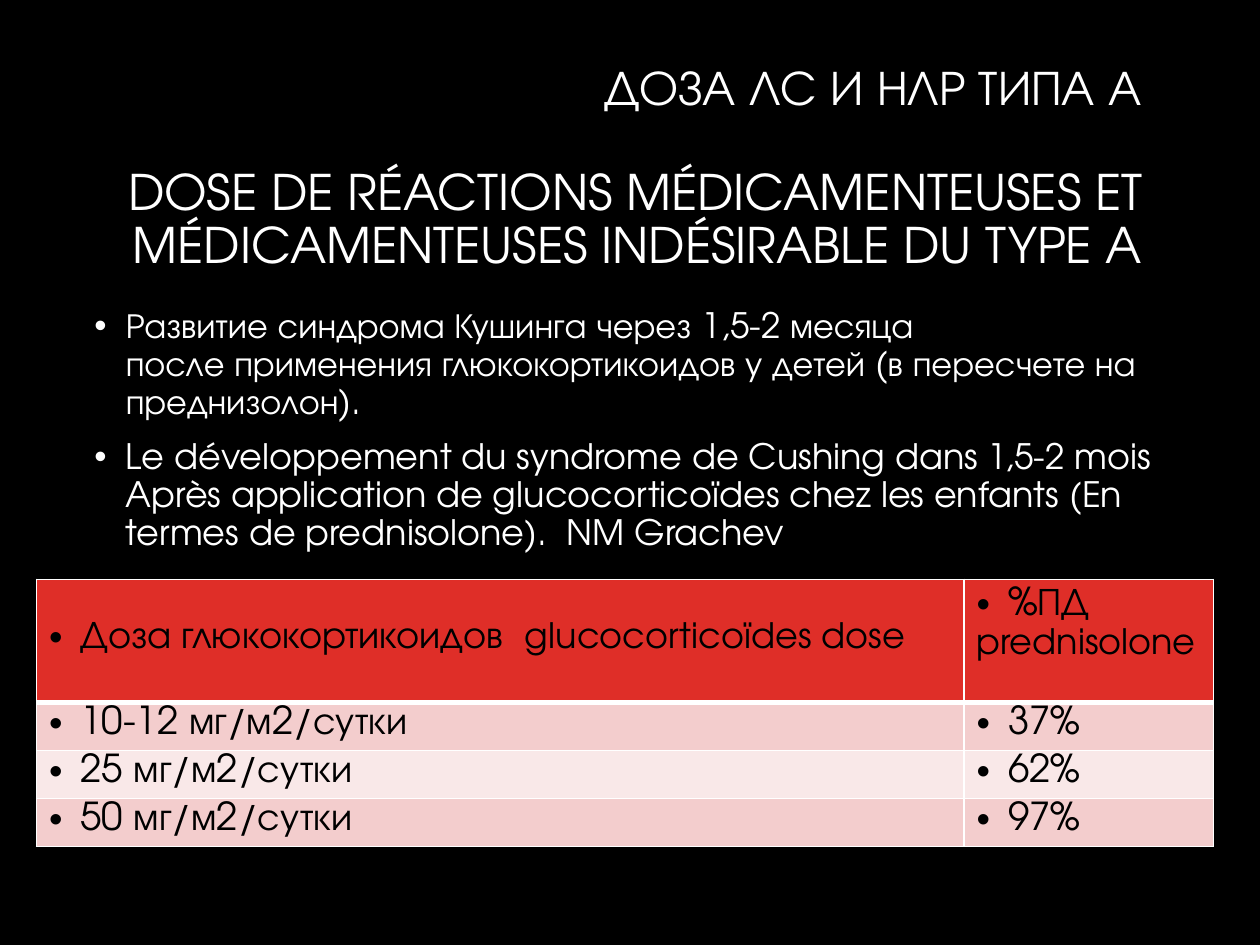
from dataclasses import dataclass

from lxml.etree import SubElement
from pptx import Presentation
from pptx.dml.color import RGBColor
from pptx.enum.text import MSO_ANCHOR as Anchor, PP_ALIGN as Align
from pptx.oxml.ns import qn
from pptx.util import Inches, Pt


@dataclass(frozen=True)
class Theme:
    """Colours, type sizes and spacing of the slide."""
    font: str = "TeX Gyre Adventor"
    background: str = "000000"
    light: str = "FFFFFF"
    dark: str = "000000"
    header: str = "DF2E28"
    bands: tuple = ("F3CDCD", "F9E8E8")
    title: int = 28
    body: int = 20
    cell: int = 22
    leading: float = 0.9
    gap: int = 10
    indent: float = 0.25
    thin: int = 1
    thick: int = 3


THEME = Theme()
WIDTH, HEIGHT = 10, 7.5
TITLE_BOX = (0.067, 0.112, 0.868, 0.188)
BODY_BOX = (0.065, 0.32, 0.87, 0.593)
TABLE_BOX = (0.029, 0.613, 0.934, 0.283)
COLUMN_SHARES = (0.788, 0.212)
ROW_SHARES = (0.46, 0.18, 0.18, 0.18)

TITLES = ("ДОЗА ЛС И НЛР ТИПА А",
          "DOSE DE RÉACTIONS MÉDICAMENTEUSES ET MÉDICAMENTEUSES INDÉSIRABLE DU TYPE A")
POINTS = (
    "Развитие синдрома Кушинга через 1,5-2 месяца\vпосле применения "
    "глюкокортикоидов у детей (в пересчете на преднизолон).",
    "Le développement du syndrome de Cushing dans 1,5-2 mois Après application de "
    "glucocorticoïdes chez les enfants (En termes de prednisolone).  NM Grachev",
)
DOSES = (("10-12 мг/м2/сутки", "37%"), ("25 мг/м2/сутки", "62%"), ("50 мг/м2/сутки", "97%"))


def apply(target, values):
    """Set each attribute of the target from a dict."""
    for name, value in values.items():
        setattr(target, name, value)


def place(box):
    """Turn shares of the slide into lengths."""
    return [Inches(share * side) for share, side in zip(box, (WIDTH, HEIGHT) * 2)]


def paint(fill, colour):
    """Give a fill one solid colour."""
    fill.solid()
    fill.fore_color.rgb = RGBColor.from_string(colour)


def write(paragraph, runs, colour, before=0, align=Align.LEFT, hanging=False, bullet=False):
    """Write (text, size) runs into a paragraph."""
    apply(paragraph, {"alignment": align, "line_spacing": THEME.leading,
                      "space_before": Pt(before)})
    properties = paragraph._p.get_or_add_pPr()
    if hanging:
        properties.set("marL", str(Inches(THEME.indent)))
        properties.set("indent", str(-Inches(THEME.indent)))
    if bullet:
        SubElement(properties, qn("a:buFont"), typeface="Arial")
        SubElement(properties, qn("a:buChar"), char="•")
    for text, size in runs:
        for index, line in enumerate(text.split("\v")):
            if index:
                paragraph.add_line_break()
            run = paragraph.add_run()
            run.text = line
            apply(run.font, {"name": THEME.font, "size": Pt(size)})
            run.font.color.rgb = RGBColor.from_string(colour)


def add_title(slide, box):
    """Place the two-language title, right aligned."""
    frame = slide.shapes.add_textbox(*place(box)).text_frame
    apply(frame, {"word_wrap": True, "vertical_anchor": Anchor.MIDDLE,
                  "margin_bottom": Inches(0.46)})
    russian, french = frame.paragraphs[0], frame.add_paragraph()
    write(russian, [(TITLES[0], THEME.title)], THEME.light, align=Align.RIGHT)
    russian._p.get_or_add_pPr().set("marR", str(Inches(0.19)))
    write(french, [(TITLES[1], THEME.title)], THEME.light, before=30, align=Align.RIGHT)


def add_points(slide, box):
    """Place the bulleted points."""
    frame = slide.shapes.add_textbox(*place(box)).text_frame
    frame.word_wrap = True
    for index, point in enumerate(POINTS):
        paragraph = frame.add_paragraph() if index else frame.paragraphs[0]
        write(paragraph, [(point, THEME.body)], THEME.light,
              before=THEME.gap if index else 0, hanging=True, bullet=True)


def add_borders(cell, top, bottom):
    """Draw the four edges of a cell ahead of its fill."""
    properties = cell._tc.get_or_add_tcPr()
    edges = {"L": THEME.thin, "R": THEME.thin, "T": top, "B": bottom}
    for index, (edge, width) in enumerate(edges.items()):
        line = SubElement(properties, qn(f"a:ln{edge}"), w=str(Pt(width)))
        fill = SubElement(line, qn("a:solidFill"))
        SubElement(fill, qn("a:srgbClr"), val=THEME.light)
        properties.insert(index, line)


def add_dose_table(slide, box):
    """Place the dose table with its header and banded rows."""
    header = ([[("Доза глюкокортикоидов  ", THEME.cell), ("glucocorticoïdes dose", THEME.body)]],
              [[("%ПД", THEME.cell)], [("prednisolone", THEME.body)]])
    rows = [header] + [[[[(text, THEME.cell)]] for text in dose] for dose in DOSES]
    left, top, width, height = place(box)
    table = slide.shapes.add_table(len(rows), len(COLUMN_SHARES), left, top, width, height).table
    for column, share in zip(table.columns, COLUMN_SHARES):
        column.width = int(width * share)
    for row, share in zip(table.rows, ROW_SHARES):
        row.height = int(height * share)
    for r, row in enumerate(rows):
        for c, paragraphs in enumerate(row):
            cell = table.cell(r, c)
            two_lines = len(paragraphs) > 1
            apply(cell, {"vertical_anchor": Anchor.MIDDLE, "margin_top": 0,
                         "margin_bottom": Inches(0.25 if two_lines else 0.03)})
            paint(cell.fill, THEME.bands[(r - 1) % 2] if r else THEME.header)
            add_borders(cell, THEME.thick if r == 1 else THEME.thin,
                        THEME.thin if r else THEME.thick)
            for index, runs in enumerate(paragraphs):
                paragraph = (cell.text_frame.add_paragraph() if index
                             else cell.text_frame.paragraphs[0])
                write(paragraph, runs, THEME.dark, before=THEME.gap / 2 if index else 0,
                      hanging=True, bullet=not index)


def main():
    """Build and save the slide."""
    presentation = Presentation()
    apply(presentation, {"slide_width": Inches(WIDTH), "slide_height": Inches(HEIGHT)})
    slide = presentation.slides.add_slide(presentation.slide_layouts[6])
    paint(slide.background.fill, THEME.background)
    add_title(slide, TITLE_BOX)
    add_points(slide, BODY_BOX)
    add_dose_table(slide, TABLE_BOX)
    presentation.save("out.pptx")


if __name__ == "__main__":
    main()
